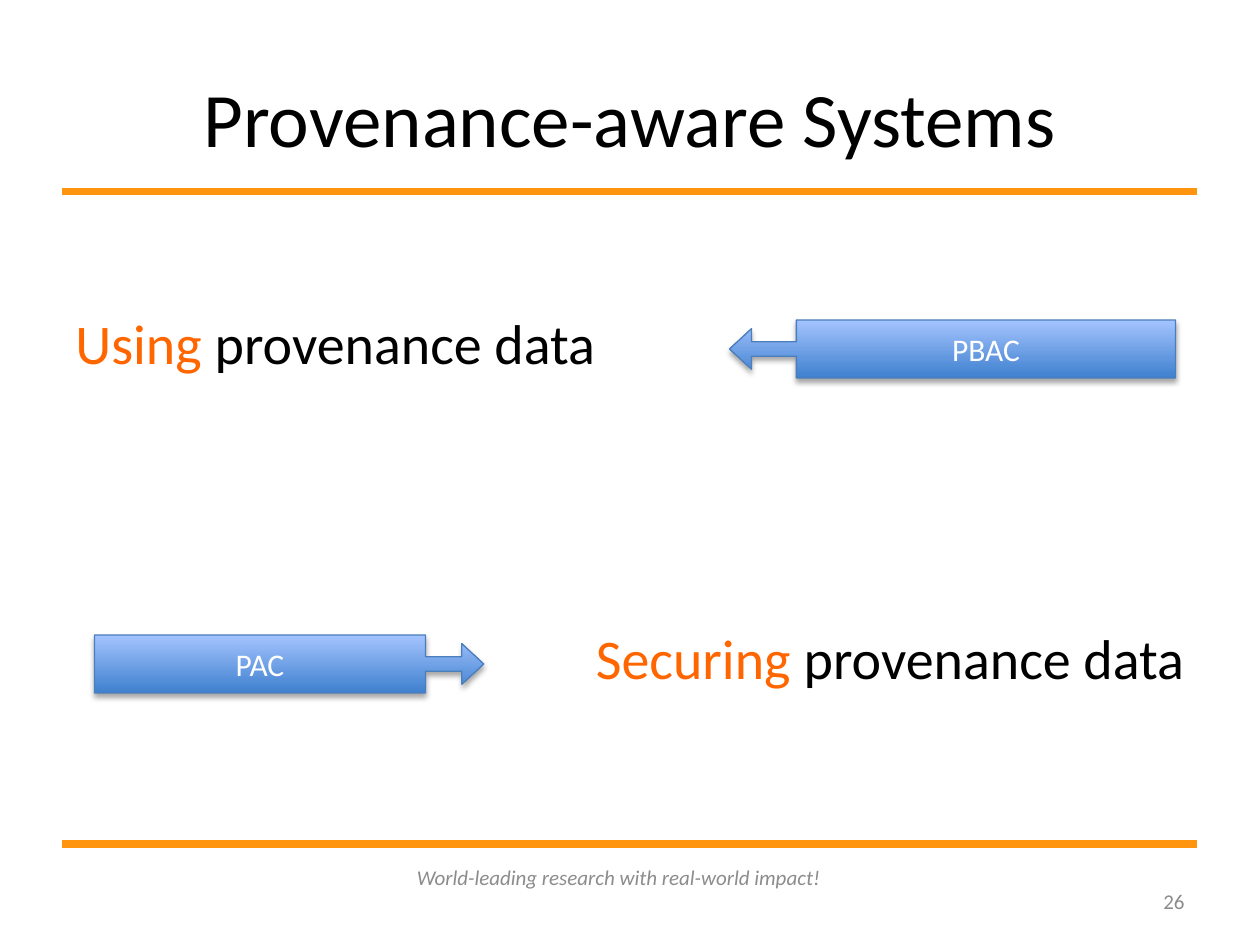
import lxml.etree
import pptx
import pptx.dml.color
import pptx.enum.shapes
import pptx.enum.text
import pptx.oxml
import pptx.oxml.ns
import pptx.util

ALIGN = pptx.enum.text.PP_ALIGN
ANCHOR = pptx.enum.text.MSO_ANCHOR
RGB = pptx.dml.color.RGBColor.from_string
qn = pptx.oxml.ns.qn

THEME = {
    "font": "Calibri",
    "title": 44, "body": 32, "label": 18, "small": 12,
    "text": "000000", "accent": "FF6600", "rule": "FF950E",
    "muted": "8C8C8C", "light": "FFFFFF",
    "grad": ("3F80CE", "A4C4FF"), "edge": "4B7EBC",
}

prs = pptx.Presentation()
prs.slide_width, prs.slide_height = pptx.util.Inches(10), pptx.util.Inches(7.5)
COL, ROW = prs.slide_width / 20, prs.slide_height / 15


def grid(left, top, width, height):
    """Turn columns and rows into left, top, width and height."""
    return int(left * COL), int(top * ROW), int(width * COL), int(height * ROW)


def write(tf, text, size="body", color="text", align=ALIGN.LEFT,
          anchor=ANCHOR.MIDDLE, italic=False):
    """Add a formatted run to the first paragraph of a text frame."""
    tf.word_wrap = True
    tf.vertical_anchor = anchor
    p = tf.paragraphs[0]
    p.alignment = align
    r = p.add_run()
    r.text = text
    r.font.name = THEME["font"]
    r.font.size = pptx.util.Pt(THEME[size])
    r.font.color.rgb = RGB(THEME[color])
    r.font.italic = italic


s = prs.slides.add_slide(prs.slide_layouts[5])

# Rules above and below the content
for y in (3.04, 13.4):
    left, top, width, _ = grid(0.98, y, 18.02, 0)
    rule = s.shapes.add_connector(
        pptx.enum.shapes.MSO_CONNECTOR.STRAIGHT, left, top, left + width, top)
    rule.line.color.rgb = RGB(THEME["rule"])
    rule.line.width = pptx.util.Pt(4.31)
    lxml.etree.SubElement(rule._element.spPr, qn("a:effectLst"))

# Title
title = s.shapes.title
title.left, title.top, title.width, title.height = grid(1, 0.6, 18, 2.5)
write(title.text_frame, "Provenance-aware Systems", size="title",
      align=ALIGN.CENTER)

# Each band pairs a statement with a callout pointing at it
bands = [
    # row, verb, alignment, callout label, callout left and width, mirrored
    (5.08, "Using", ALIGN.LEFT, "PBAC", 11.58, 7.08, False),
    (10.08, "Securing", ALIGN.RIGHT, "PAC", 1.5, 6.18, True),
]
for row, verb, align, label, left, width, mirrored in bands:
    text_left = 9 if mirrored else 1
    tf = s.shapes.add_textbox(*grid(text_left, row - 0.28, 10, 1.28)).text_frame
    write(tf, verb, color="accent", align=align, anchor=ANCHOR.TOP)
    write(tf, " provenance data", align=align, anchor=ANCHOR.TOP)

    sp = s.shapes.add_shape(
        pptx.enum.shapes.MSO_SHAPE.LEFT_ARROW_CALLOUT,
        *grid(left, row, width, 0.92))
    for i, value in enumerate((0.25, 0.35, 0.38, 0.85)):
        sp.adjustments[i] = value
    if mirrored:
        sp._element.spPr.find(qn("a:xfrm")).set("flipH", "1")
    sp.fill.gradient()
    sp.fill.gradient_angle = 90
    for stop, color in zip(sp.fill.gradient_stops, THEME["grad"]):
        stop.color.rgb = RGB(color)
    sp.line.color.rgb = RGB(THEME["edge"])
    sp.line.width = pptx.util.Pt(0.75)

    # Soft shadow below the callout
    sp.shadow.inherit = False
    shadow = lxml.etree.SubElement(
        sp._element.spPr.find(qn("a:effectLst")), qn("a:outerShdw"),
        blurRad=str(pptx.util.Pt(3.1)), dist=str(pptx.util.Pt(1.8)),
        dir="5400000", rotWithShape="0")
    black = lxml.etree.SubElement(shadow, qn("a:srgbClr"), val="000000")
    lxml.etree.SubElement(black, qn("a:alpha"), val="35000")
    write(sp.text_frame, label, size="label", color="light",
          align=ALIGN.CENTER)

# Footer and page number
footer = s.shapes.add_textbox(*grid(6.2, 13.52, 7.24, 0.8))
write(footer.text_frame, "World-leading research with real-world impact!",
      size="small", color="muted", align=ALIGN.CENTER, italic=True)
number = s.shapes.add_textbox(*grid(14.34, 13.9, 4.66, 0.8))
write(number.text_frame, "26", size="small", color="muted", align=ALIGN.RIGHT)

prs.save("out.pptx")
